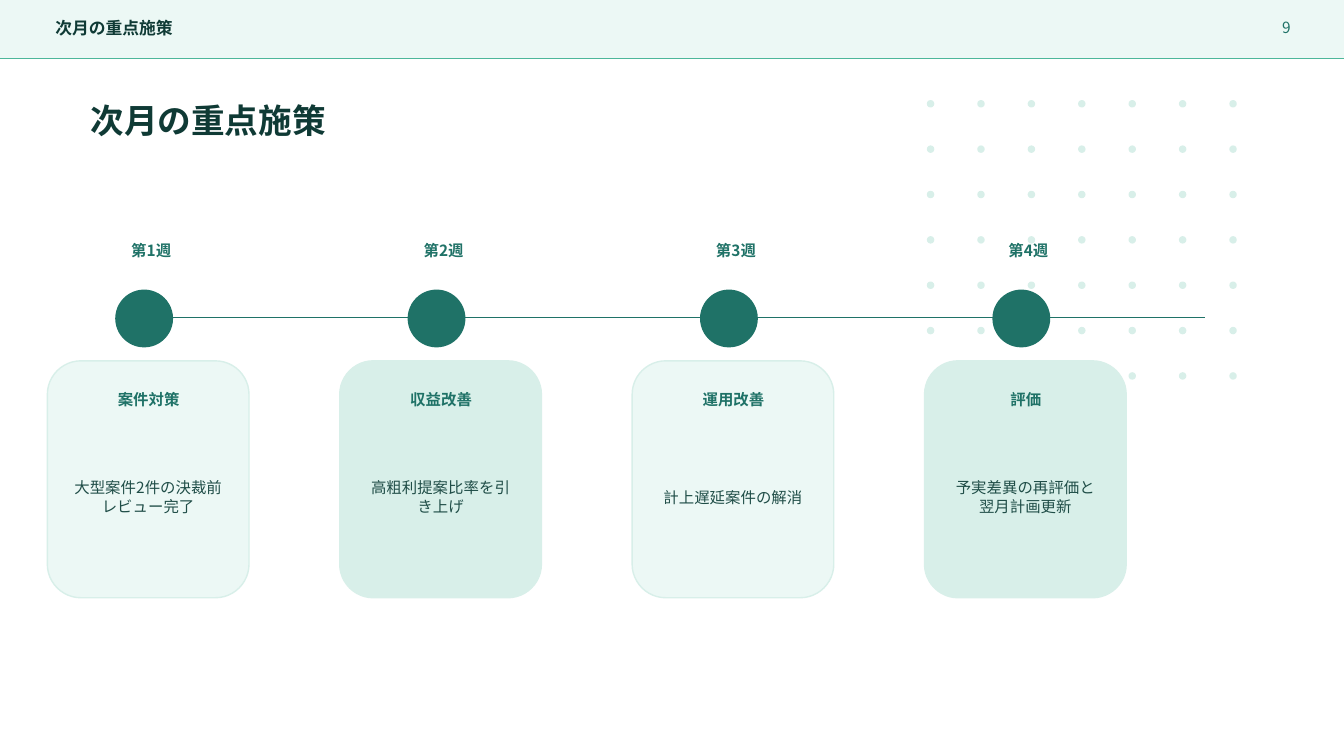
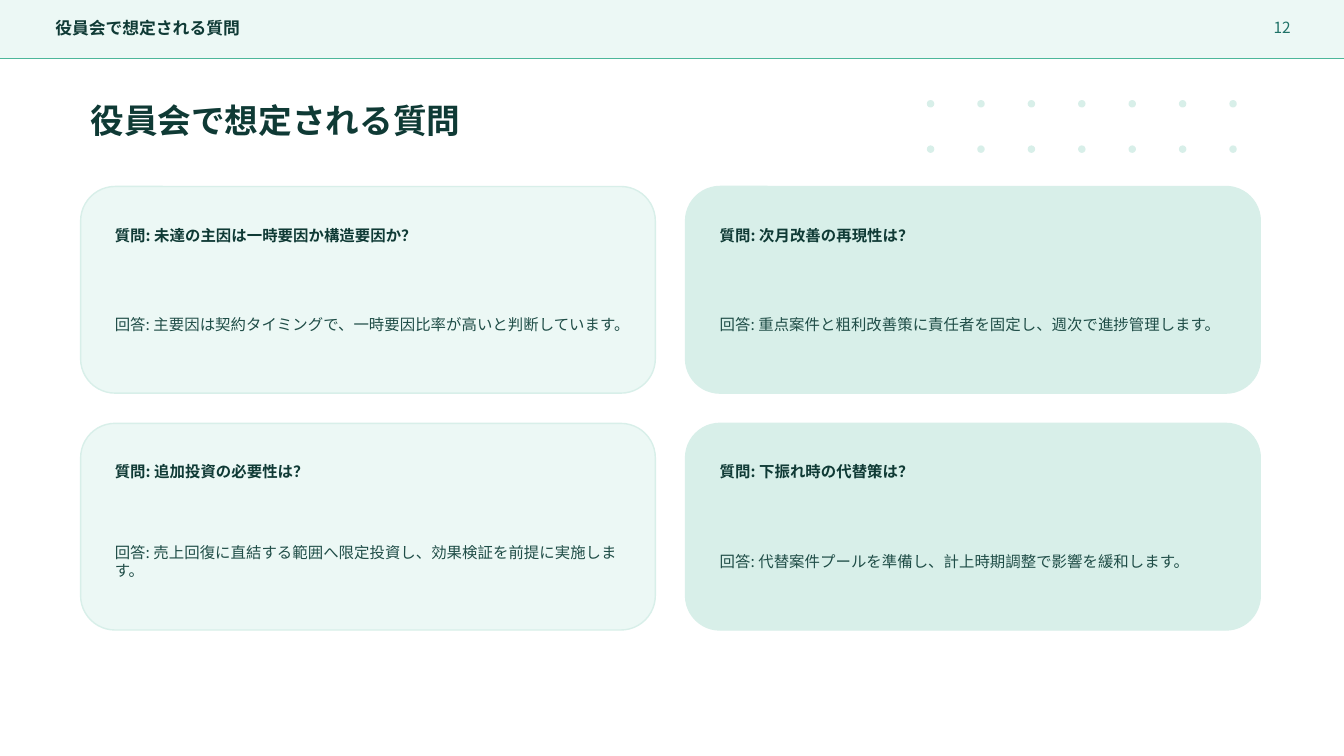
from lxml.etree import SubElement
from pptx import Presentation
from pptx.dml.color import RGBColor
from pptx.enum.shapes import MSO_CONNECTOR, MSO_SHAPE
from pptx.enum.text import MSO_ANCHOR, PP_ALIGN
from pptx.oxml.ns import qn
from pptx.util import Inches, Pt

COLORS = {
    "ink": "0F3A35",
    "body": "1F4D47",
    "accent": "1F7267",
    "rule": "4DB79A",
    "mint": "D8EFE9",
    "pale": "ECF8F5",
}
BODY_FONT = "Noto Sans CJK JP"
TITLE_FONT = "Cabin"
SLIDE_WIDTH, SLIDE_HEIGHT = 13.33, 7.5
BAND_HEIGHT = 0.58

WEEKS = [
    ("第1週", "案件対策", "大型案件2件の決裁前レビュー完了"),
    ("第2週", "収益改善", "高粗利提案比率を引き上げ"),
    ("第3週", "運用改善", "計上遅延案件の解消"),
    ("第4週", "評価", "予実差異の再評価と翌月計画更新"),
]
QUESTIONS = [
    ("質問: 未達の主因は一時要因か構造要因か？",
     "回答: 主要因は契約タイミングで、一時要因比率が高いと判断しています。"),
    ("質問: 次月改善の再現性は？",
     "回答: 重点案件と粗利改善策に責任者を固定し、週次で進捗管理します。"),
    ("質問: 追加投資の必要性は？",
     "回答: 売上回復に直結する範囲へ限定投資し、効果検証を前提に実施します。"),
    ("質問: 下振れ時の代替策は？",
     "回答: 代替案件プールを準備し、計上時期調整で影響を緩和します。"),
]


def color(name):
    return RGBColor.from_string(COLORS[name])


def add_text(slide, text, left, top, width, height, size=11, ink="body",
             bold=False, align=PP_ALIGN.LEFT, font_name=BODY_FONT):
    box = slide.shapes.add_textbox(
        Inches(left), Inches(top), Inches(width), Inches(height))
    frame = box.text_frame
    frame.word_wrap = True
    frame.vertical_anchor = MSO_ANCHOR.MIDDLE
    paragraph = frame.paragraphs[0]
    paragraph.alignment = align
    run = paragraph.add_run()
    run.text = text
    font = run.font
    font.name = font_name
    font.size = Pt(size)
    font.bold = bold
    font.color.rgb = color(ink)
    SubElement(font._element, qn("a:ea")).set("typeface", BODY_FONT)


def add_box(slide, kind, left, top, width, height, fill, line=None):
    shape = slide.shapes.add_shape(
        kind, Inches(left), Inches(top), Inches(width), Inches(height))
    shape.shadow.inherit = False
    shape.fill.solid()
    shape.fill.fore_color.rgb = color(fill)
    shape.line.color.rgb = color(line or fill)
    shape.line.width = Pt(1)


def add_horizontal_line(slide, left, right, top, ink):
    line = slide.shapes.add_connector(
        MSO_CONNECTOR.STRAIGHT,
        Inches(left), Inches(top), Inches(right), Inches(top))
    line.line.color.rgb = color(ink)
    line.line.width = Pt(1)
    SubElement(line._element.spPr, qn("a:effectLst"))


def add_card(slide, index, left, top, width, height):
    fill = "mint" if index % 2 else "pale"
    add_box(slide, MSO_SHAPE.ROUNDED_RECTANGLE, left, top, width, height,
            fill, line="mint")


def add_dots(slide, first_columns):
    for row, first_column in enumerate(first_columns):
        for column in range(first_column, 7):
            add_box(slide, MSO_SHAPE.OVAL, 9.2 + 0.5 * column,
                    1 + 0.45 * row, 0.06, 0.06, "mint")


def add_page(presentation, title, number, dot_columns):
    slide = presentation.slides.add_slide(presentation.slide_layouts[6])
    add_dots(slide, dot_columns)
    add_box(slide, MSO_SHAPE.RECTANGLE, 0, 0, SLIDE_WIDTH, BAND_HEIGHT, "pale")
    add_horizontal_line(slide, 0, SLIDE_WIDTH, BAND_HEIGHT, "rule")
    add_text(slide, title, 0.45, 0.15, 9.3, 0.26, size=12, ink="ink", bold=True)
    add_text(slide, number, 12.2, 0.14, 0.7, 0.26, ink="accent",
             align=PP_ALIGN.RIGHT)
    add_text(slide, title, 0.8, 0.95, 11.4, 0.48, size=24, ink="ink",
             bold=True, font_name=TITLE_FONT)
    return slide


def add_week(slide, index, week, heading, action):
    left = 0.47 + 2.9 * index
    label = {"ink": "accent", "bold": True, "align": PP_ALIGN.CENTER}
    add_box(slide, MSO_SHAPE.OVAL, left + 0.68, 2.88, 0.56, 0.56, "accent")
    add_text(slide, week, left + 0.58, 2.36, 0.9, 0.24, **label)
    add_card(slide, index, left, 3.58, 2, 2.35)
    add_text(slide, heading, left + 0.23, 3.85, 1.55, 0.22, **label)
    add_text(slide, action, left + 0.14, 4.18, 1.72, 1.5,
             align=PP_ALIGN.CENTER)


def add_question(slide, index, question, answer):
    row, column = divmod(index, 2)
    left, top = 0.8 + 6 * column, 1.85 + 2.35 * row
    add_card(slide, index, left, top, 5.7, 2.05)
    add_text(slide, question, left + 0.24, top + 0.24, 5.2, 0.48,
             ink="ink", bold=True)
    add_text(slide, answer, left + 0.24, top + 0.82, 5.2, 1.1)


def main():
    presentation = Presentation()
    presentation.slide_width = Inches(SLIDE_WIDTH)
    presentation.slide_height = Inches(SLIDE_HEIGHT)

    slide = add_page(presentation, "次月の重点施策", "9", [0] * 6 + [4])
    add_horizontal_line(slide, 1.35, 11.95, 3.15, "accent")
    for index, week in enumerate(WEEKS):
        add_week(slide, index, *week)

    slide = add_page(presentation, "役員会で想定される質問", "12", [0] * 2)
    for index, pair in enumerate(QUESTIONS):
        add_question(slide, index, *pair)

    presentation.save("out.pptx")


if __name__ == "__main__":
    main()
